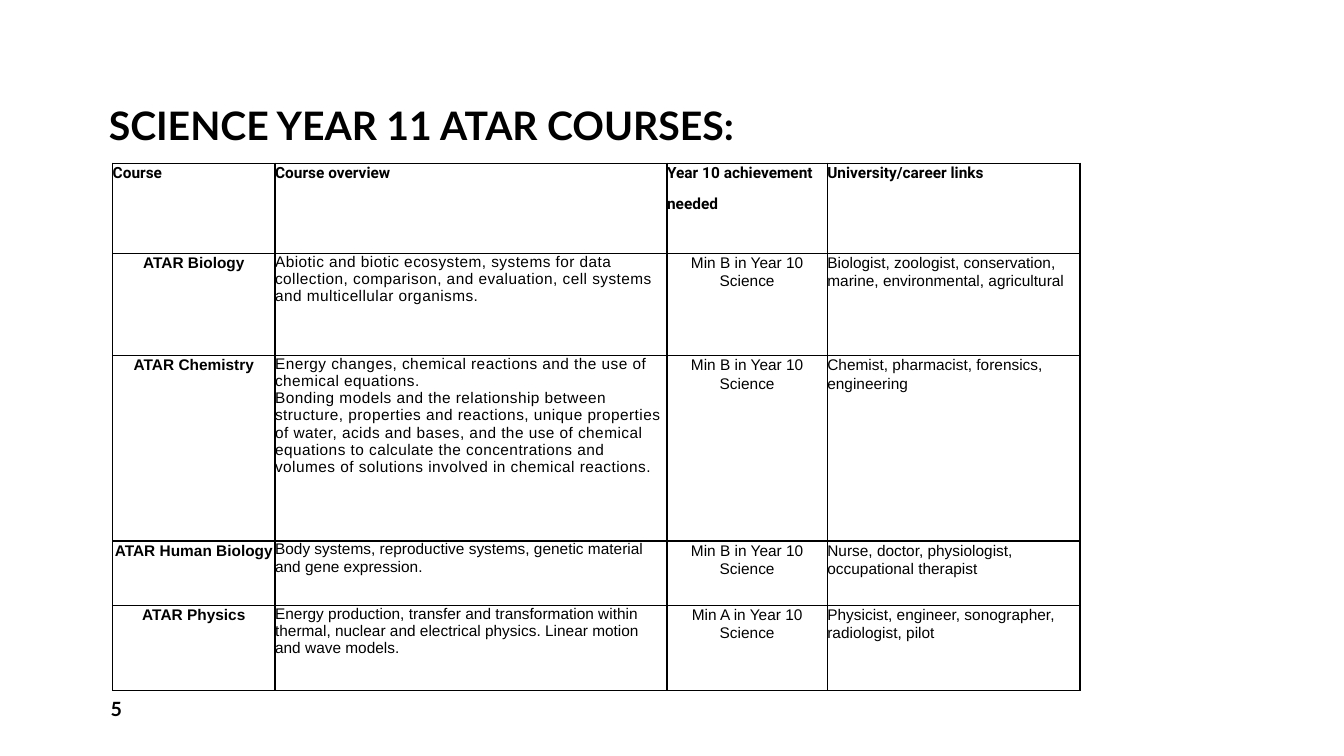
from copy import deepcopy

from lxml import etree
from pptx import Presentation
from pptx.dml.color import RGBColor
from pptx.enum import text
from pptx.oxml import ns
from pptx.util import Pt

COLORS = {"ink": "000000", "rule": "000000"}

FONTS = {
    "title": {"name": "Lato", "size": Pt(28), "bold": True},
    "number": {"name": "Lato", "size": Pt(14), "bold": True},
    "header": {"name": "Roboto", "size": Pt(11), "bold": True},
    "course": {"name": "Arial", "size": Pt(11), "bold": True},
    "detail": {"name": "Arial", "size": Pt(11), "bold": False},
}

LEFT = {"alignment": text.PP_ALIGN.LEFT}
CENTER = {"alignment": text.PP_ALIGN.CENTER}
SPACED = {"line_spacing": 1.07, "space_after": Pt(8)}

COLUMN_STYLES = [
    ("course", {**CENTER, **SPACED}),
    ("detail", LEFT),
    ("detail", {**CENTER, **SPACED}),
    ("detail", {**LEFT, **SPACED}),
]

COLUMN_WIDTHS = [116, 280, 114.5, 180.5]
ROW_HEIGHTS = [64.5, 73, 132.5, 46, 60.5]
LOOSE_ROWS = (1, 2)

COURSES = [
    ["Course", "Course overview", "Year 10 achievement\nneeded", "University/career links"],
    ["ATAR Biology",
     "Abiotic and biotic ecosystem, systems for data collection, comparison, and evaluation, "
     "cell systems and multicellular organisms.",
     "Min B in Year 10 Science",
     "Biologist, zoologist, conservation, marine, environmental, agricultural"],
    ["ATAR Chemistry",
     "Energy changes, chemical reactions and the use of chemical equations.\v"
     "Bonding models and the relationship between structure, properties and reactions, "
     "unique properties of water, acids and bases, and the use of chemical equations to "
     "calculate the concentrations and volumes of solutions involved in chemical reactions.",
     "Min B in Year 10 Science",
     "Chemist, pharmacist, forensics, engineering"],
    ["ATAR Human Biology",
     "Body systems, reproductive systems, genetic material and gene expression.",
     "Min B in Year 10 Science",
     "Nurse, doctor, physiologist, occupational therapist"],
    ["ATAR Physics",
     "Energy production, transfer and transformation within thermal, nuclear and electrical "
     "physics. Linear motion and wave models.",
     "Min A in Year 10 Science",
     "Physicist, engineer, sonographer, radiologist, pilot"],
]


def apply(target, values):
    """Set each attribute in values on target."""
    for attribute, value in values.items():
        setattr(target, attribute, value)


def write(frame, wording, font, layout, tracking=0):
    """Fill a text frame with formatted wording."""
    frame.text = wording
    for paragraph in frame.paragraphs:
        apply(paragraph, layout)
        for run in paragraph.runs:
            apply(run.font, FONTS[font])
            run.font.color.rgb = RGBColor.from_string(COLORS["ink"])
            if tracking:
                run.font._element.set("spc", str(tracking))
        for line_break in paragraph._p.findall(ns.qn("a:br")):
            line_break.insert(0, deepcopy(paragraph.runs[0].font._element))


def rule_cell(cell):
    """Draw a one-point rule on all four sides of a cell."""
    properties = cell._tc.get_or_add_tcPr()
    for index, side in enumerate(("lnL", "lnR", "lnT", "lnB")):
        rule = etree.Element(ns.qn(f"a:{side}"), w=str(Pt(1)))
        fill = etree.SubElement(rule, ns.qn("a:solidFill"))
        etree.SubElement(fill, ns.qn("a:srgbClr"), val=COLORS["rule"])
        properties.insert(index, rule)


def add_title(slide, left, top, width, height):
    """Place the slide heading in its title placeholder."""
    heading = slide.shapes.title
    apply(heading, {"left": Pt(left), "top": Pt(top), "width": Pt(width), "height": Pt(height)})
    write(heading.text_frame, "SCIENCE YEAR 11 ATAR COURSES:", "title",
          {**LEFT, "line_spacing": 0.9})
    apply(heading.text_frame, {"vertical_anchor": text.MSO_ANCHOR.BOTTOM,
                               "auto_size": text.MSO_AUTO_SIZE.NONE, "word_wrap": True})


def add_courses(slide, left, top):
    """Place the course table with its top left corner at the given point."""
    courses = slide.shapes.add_table(
        len(ROW_HEIGHTS), len(COLUMN_WIDTHS), Pt(left), Pt(top),
        Pt(sum(COLUMN_WIDTHS)), Pt(sum(ROW_HEIGHTS))).table
    apply(courses, {"first_row": False, "horz_banding": False})
    for column, width in zip(courses.columns, COLUMN_WIDTHS):
        column.width = Pt(width)
    for row, height in zip(courses.rows, ROW_HEIGHTS):
        row.height = Pt(height)
    margins = {f"margin_{side}": 0 for side in ("left", "right", "top", "bottom")}
    for row_index, entries in enumerate(COURSES):
        for column_index, entry in enumerate(entries):
            cell = courses.cell(row_index, column_index)
            font, layout = COLUMN_STYLES[column_index]
            if row_index == 0:
                font, layout = "header", {**LEFT, **SPACED}
            loose = column_index == 1 and row_index in LOOSE_ROWS
            apply(cell, margins)
            cell.fill.background()
            rule_cell(cell)
            write(cell.text_frame, entry, font, layout, 30 if loose else 0)


def add_number(slide, left, top, width, height):
    """Place the page number."""
    number = slide.shapes.add_textbox(Pt(left), Pt(top), Pt(width), Pt(height)).text_frame
    apply(number, {"word_wrap": True, "vertical_anchor": text.MSO_ANCHOR.MIDDLE})
    write(number, "5", "number", {**LEFT, "space_after": Pt(6)})


def main():
    """Build and save the slide."""
    deck = Presentation()
    apply(deck, {"slide_width": Pt(960), "slide_height": Pt(540)})
    slide = deck.slides.add_slide(deck.slide_layouts[5])
    add_title(slide, 70.5, 6, 819.5, 104)
    add_courses(slide, 80.5, 116.5)
    add_number(slide, 72, 492, 210, 29)
    deck.save("out.pptx")


if __name__ == "__main__":
    main()
